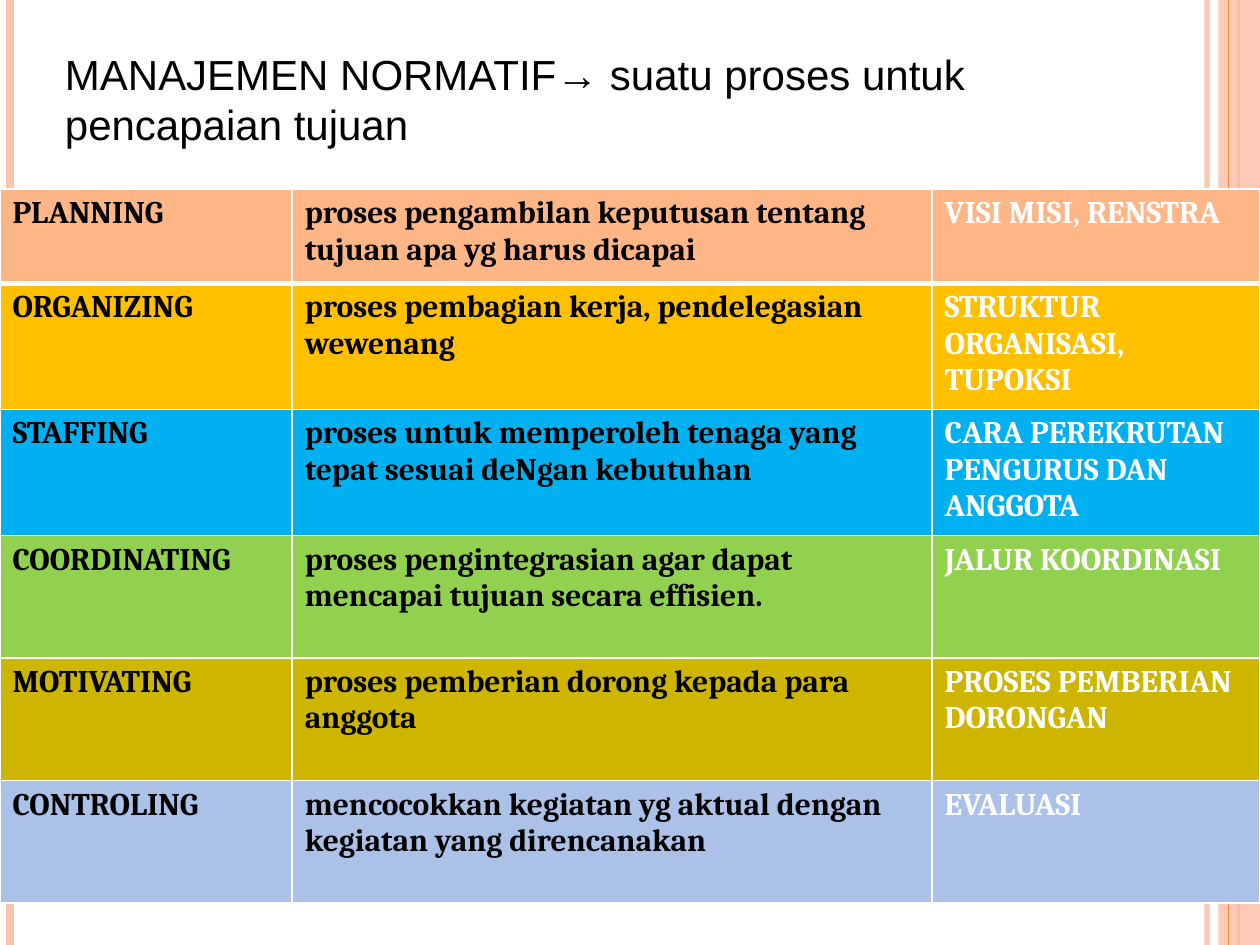
from lxml.etree import SubElement
from pptx import Presentation
from pptx.dml.color import RGBColor as Color
from pptx.enum.shapes import MSO_CONNECTOR as Connector, MSO_SHAPE as Shape
from pptx.enum.text import MSO_ANCHOR as Anchor, PP_ALIGN as Align
from pptx.oxml.ns import qn
from pptx.util import Cm, Pt

# Content
TITLE = "MANAJEMEN NORMATIF→ suatu proses untuk pencapaian tujuan"
FUNCTIONS = [
    ("PLANNING", "proses pengambilan keputusan tentang tujuan apa yg harus dicapai",
     "VISI MISI, RENSTRA", "FEB687"),
    ("ORGANIZING", "proses pembagian kerja, pendelegasian wewenang",
     "STRUKTUR ORGANISASI, TUPOKSI", "FFC000"),
    ("STAFFING", "proses untuk memperoleh tenaga yang tepat sesuai deNgan kebutuhan",
     "CARA PEREKRUTAN PENGURUS DAN ANGGOTA", "00B0F0"),
    ("COORDINATING", "proses pengintegrasian agar dapat mencapai tujuan secara effisien.",
     "JALUR KOORDINASI", "92D050"),
    ("MOTIVATING", "proses pemberian dorong kepada para anggota",
     "PROSES PEMBERIAN DORONGAN", "CEB500"),
    ("CONTROLING", "mencocokkan kegiatan yg aktual dengan kegiatan yang direncanakan",
     "EVALUASI", "ACC1E8"),
]

# Theme and layout (lengths in cm)
THEME = {
    "pink": "FEC3AE", "orange": "FE8637", "border": "FFFFFF",
    "title": {"name": "Arial", "size": Pt(24), "color": "000000"},
    "cell": {"name": "Cambria", "size": Pt(18), "bold": True, "color": "000000"},
    "example": {"name": "Cambria", "size": Pt(18), "bold": True, "color": "FFFFFF"},
}
WIDTH, HEIGHT = 25.4, 19.05
BAND_LEFT = 24.56
TABLE_TOP = 3.81
COLUMN_WIDTHS = (5.89, 12.9, 6.61)
FIRST_ROW, OTHER_ROW = 1.9, 2.47
# x, colour, width in points, opacity in percent
BACK_STRIPES = [(24.33, "pink", 3, 93), (0.21, "pink", 4.5, 100), (24.97, "orange", 1.5, 100)]
FRONT_STRIPES = [(24.77, "orange", 0.75, 100)]


def set_opacity(properties, percent):
    color = next(properties.iter(qn("a:srgbClr")))
    SubElement(color, qn("a:alpha"), val=str(percent * 1000))


def format_font(font, values):
    for name, value in values.items():
        if name == "color":
            font.color.rgb = Color.from_string(value)
        else:
            setattr(font, name, value)


def add_stripes(slide, stripes):
    for x, color, width, opacity in stripes:
        stripe = slide.shapes.add_connector(Connector.STRAIGHT, Cm(x), 0, Cm(x), Cm(HEIGHT))
        stripe.line.color.rgb = Color.from_string(THEME[color])
        stripe.line.width = Pt(width)
        properties = stripe._element.spPr
        if opacity < 100:
            set_opacity(properties, opacity)
        SubElement(properties, qn("a:effectLst"))


def add_band(slide):
    band = slide.shapes.add_shape(Shape.RECTANGLE, Cm(BAND_LEFT), 0,
                                  Cm(WIDTH - BAND_LEFT), Cm(HEIGHT))
    band.shadow.inherit = False
    band.fill.solid()
    band.fill.fore_color.rgb = Color.from_string(THEME["pink"])
    set_opacity(band._element.spPr, 87)
    band.line.fill.background()


def add_title(slide):
    box = slide.shapes.add_textbox(Cm(1.06), Cm(0.85), Cm(22.86), Cm(3.18))
    frame = box.text_frame
    frame.word_wrap = True
    frame.vertical_anchor = Anchor.TOP
    paragraph = frame.paragraphs[0]
    paragraph.alignment = Align.LEFT
    run = paragraph.add_run()
    run.text = TITLE
    format_font(run.font, THEME["title"])


def set_borders(cell, widths):
    properties = cell._tc.get_or_add_tcPr()
    for side, width in widths.items():
        line = SubElement(properties, qn(f"a:ln{side}"), w=str(Pt(width)))
        fill = SubElement(line, qn("a:solidFill"))
        SubElement(fill, qn("a:srgbClr"), val=THEME["border"])


def add_function_table(slide):
    heights = [FIRST_ROW] + [OTHER_ROW] * (len(FUNCTIONS) - 1)
    table = slide.shapes.add_table(len(FUNCTIONS), len(COLUMN_WIDTHS), 0, Cm(TABLE_TOP),
                                   Cm(WIDTH), Cm(sum(heights))).table
    table.first_row = table.horz_banding = False
    for column, width in zip(table.columns, COLUMN_WIDTHS):
        column.width = Cm(width)
    for row_index, (*texts, fill) in enumerate(FUNCTIONS):
        table.rows[row_index].height = Cm(heights[row_index])
        # The first row is set off by a thick rule
        top, bottom = {0: (1, 3), 1: (3, 1)}.get(row_index, (1, 1))
        for column_index, (text, style) in enumerate(zip(texts, ("cell", "cell", "example"))):
            cell = table.cell(row_index, column_index)
            set_borders(cell, {"L": 1, "R": 1, "T": top, "B": bottom})
            cell.fill.solid()
            cell.fill.fore_color.rgb = Color.from_string(fill)
            run = cell.text_frame.paragraphs[0].add_run()
            run.text = text
            format_font(run.font, THEME[style])


def main():
    presentation = Presentation()
    presentation.slide_width, presentation.slide_height = Cm(WIDTH), Cm(HEIGHT)
    slide = presentation.slides.add_slide(presentation.slide_layouts[6])
    # Side decoration
    add_stripes(slide, BACK_STRIPES)
    add_band(slide)
    add_stripes(slide, FRONT_STRIPES)
    # Title and management functions
    add_title(slide)
    add_function_table(slide)
    presentation.save("out.pptx")


if __name__ == "__main__":
    main()
